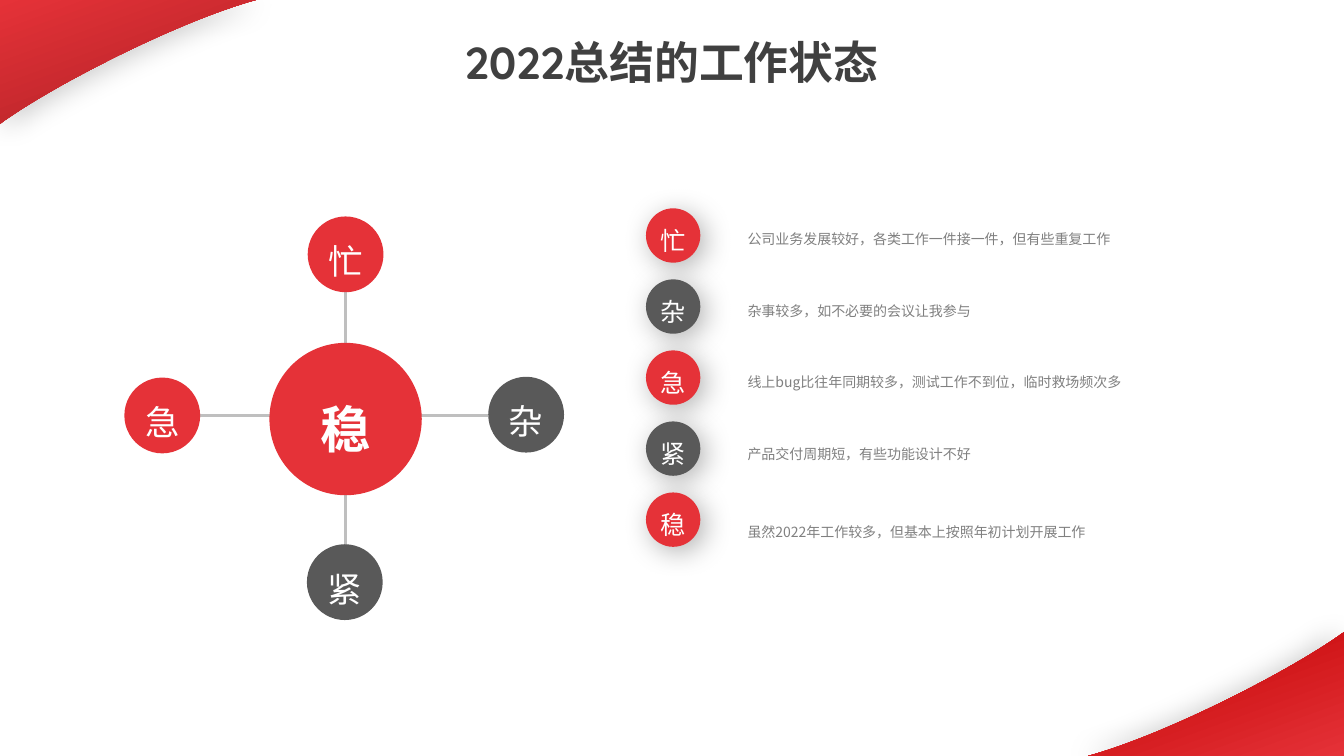
import dataclasses
import typing

import lxml.etree
import pptx
import pptx.dml.color
import pptx.enum.dml
import pptx.enum.shapes
import pptx.enum.text
import pptx.oxml.ns
import pptx.util

Cm = pptx.util.Cm
Pt = pptx.util.Pt
Align = pptx.enum.text.PP_ALIGN
Anchor = pptx.enum.text.MSO_ANCHOR
AutoSize = pptx.enum.text.MSO_AUTO_SIZE
qn = pptx.oxml.ns.qn

WIDTH, HEIGHT = 33.87, 19.05
RED, DARK_RED, DEEP_RED = "E53238", "AC2125", "C00000"
GRAY, LINE_GRAY, TEXT_GRAY, TITLE_GRAY = "595959", "BFBFBF", "808080", "404040"
WHITE, BLACK = "FFFFFF", "000000"
CJK_FONT, TITLE_FONT = "Noto Sans CJK SC", "Quicksand"
CORNER_CURVE = ((6.45, 0), (4.42, 0.56), (1.24, 2.21), (0, 3.12))
CURVE_STEPS = 32
ROW_DIAMETER, ROW_LEFT, ROW_TOP, ROW_STEP = 1.37, 16.28, 5.25, 1.79
NO_MARGINS = {f"margin_{side}": 0 for side in ("left", "top", "right", "bottom")}


@dataclasses.dataclass
class Corner:
    flipped: bool
    end_color: str
    gradient_angle: int
    shadow_direction: int


@dataclasses.dataclass
class Node:
    label: str
    center_x: float
    center_y: float
    color: str
    diameter: float = 1.91
    size: float = 24.6
    bold: bool = False


@dataclasses.dataclass
class Row:
    label: str
    color: str
    text: str
    text_top: float


@dataclasses.dataclass
class Spoke:
    begin_x: float
    begin_y: float
    end_x: float
    end_y: float


CORNERS = [
    Corner(False, DARK_RED, 290, 45),
    Corner(True, DEEP_RED, 110, 180),
]
SPOKES = [Spoke(8.71, 6.4, 8.71, 14.66), Spoke(12.29, 10.46, 5.05, 10.46)]
NODES = [
    Node("稳", 8.71, 10.56, RED, 3.84, 36, True),
    Node("忙", 8.71, 6.41, RED),
    Node("紧", 8.69, 14.67, GRAY),
    Node("急", 4.09, 10.47, RED),
    Node("杂", 13.26, 10.45, GRAY),
]
ROWS = [
    Row("忙", RED, "公司业务发展较好，各类工作一件接一件，但有些重复工作", 5.56),
    Row("杂", GRAY, "杂事较多，如不必要的会议让我参与", 7.37),
    Row("急", RED, "线上bug比往年同期较多，测试工作不到位，临时救场频次多", 9.17),
    Row("紧", GRAY, "产品交付周期短，有些功能设计不好", 10.97),
    Row("稳", RED, "虽然2022年工作较多，但基本上按照年初计划开展工作", 12.93),
]


def rgb(color: str) -> pptx.dml.color.RGBColor:
    return pptx.dml.color.RGBColor.from_string(color)


def apply(target: typing.Any, values: dict[str, typing.Any]) -> None:
    for name, value in values.items():
        setattr(target, name, value)


def add_shadow(shape: typing.Any, opacity: int, direction: int) -> None:
    shape.shadow.inherit = False
    effects = shape._element.spPr.find(qn("a:effectLst"))
    shadow = lxml.etree.SubElement(
        effects, qn("a:outerShdw"), blurRad=str(Pt(20)), dist=str(Pt(5)),
        dir=str(direction * 60000), algn="ctr", rotWithShape="0")
    color = lxml.etree.SubElement(shadow, qn("a:srgbClr"), val=BLACK)
    lxml.etree.SubElement(color, qn("a:alpha"), val=str(opacity * 1000))


def write_text(shape: typing.Any, text: str, color: str, frame_format: dict,
               paragraph_format: dict, font_format: dict) -> None:
    frame = shape.text_frame
    apply(frame, frame_format)
    paragraph = frame.paragraphs[0]
    apply(paragraph, paragraph_format)
    run = paragraph.add_run()
    run.text = text
    apply(run.font, {"name": CJK_FONT} | font_format)
    run.font.color.rgb = rgb(color)
    lxml.etree.SubElement(run._r.get_or_add_rPr(), qn("a:ea"), typeface=CJK_FONT)


def curve_point(position: float) -> tuple[float, float]:
    rest = 1 - position
    weights = (rest ** 3, 3 * rest ** 2 * position, 3 * rest * position ** 2, position ** 3)
    return tuple(sum(weight * point[axis] for weight, point in zip(weights, CORNER_CURVE))
                 for axis in (0, 1))


def add_corner(slide: typing.Any, corner: Corner) -> None:
    outline = [(0, 0)] + [curve_point(step / CURVE_STEPS) for step in range(CURVE_STEPS + 1)]
    if corner.flipped:
        outline = [(WIDTH - x, HEIGHT - y) for x, y in outline]
    points = [(Cm(x), Cm(y)) for x, y in outline]
    builder = slide.shapes.build_freeform(*points[0])
    builder.add_line_segments(points[1:], close=True)
    shape = builder.convert_to_shape()
    shape.fill.gradient()
    shape.fill.gradient_angle = corner.gradient_angle
    for stop, color in zip(shape.fill.gradient_stops, (RED, corner.end_color)):
        stop.color.rgb = rgb(color)
    shape.line.fill.background()
    add_shadow(shape, 20, corner.shadow_direction)


def add_spoke(slide: typing.Any, spoke: Spoke) -> None:
    ends = [Cm(value) for value in dataclasses.astuple(spoke)]
    connector = slide.shapes.add_connector(pptx.enum.shapes.MSO_CONNECTOR.STRAIGHT, *ends)
    connector.line.width = Pt(2)
    connector.line.color.rgb = rgb(LINE_GRAY)
    lxml.etree.SubElement(connector._element.spPr, qn("a:effectLst"))


def add_circle(slide: typing.Any, node: Node, frame_format: dict) -> typing.Any:
    radius = node.diameter / 2
    shape = slide.shapes.add_shape(
        pptx.enum.shapes.MSO_SHAPE.OVAL, Cm(node.center_x - radius),
        Cm(node.center_y - radius), Cm(node.diameter), Cm(node.diameter))
    shape.shadow.inherit = False
    shape.fill.solid()
    shape.fill.fore_color.rgb = rgb(node.color)
    shape.line.fill.background()
    write_text(shape, node.label, WHITE,
               {"vertical_anchor": Anchor.MIDDLE} | frame_format,
               {"alignment": Align.CENTER, "line_spacing": 1.3},
               {"size": Pt(node.size), "bold": node.bold})
    return shape


def add_row(slide: typing.Any, index: int, row: Row) -> None:
    radius = ROW_DIAMETER / 2
    badge = Node(row.label, ROW_LEFT + radius, ROW_TOP + index * ROW_STEP + radius,
                 row.color, ROW_DIAMETER, 18)
    add_shadow(add_circle(slide, badge, {"word_wrap": False}), 30, 45)
    text_box = slide.shapes.add_textbox(Cm(18.59), Cm(row.text_top), Cm(12.14), Cm(0.76))
    write_text(text_box, row.text, TEXT_GRAY,
               {"word_wrap": True, "auto_size": AutoSize.SHAPE_TO_FIT_TEXT},
               {"alignment": Align.JUSTIFY, "line_spacing": 1.3}, {"size": Pt(10)})


def add_title(slide: typing.Any) -> None:
    title = slide.shapes.add_textbox(Cm(11), Cm(0.74), Cm(11.86), Cm(1.63))
    write_text(title, "2022总结的工作状态", TITLE_GRAY,
               {"word_wrap": True, "auto_size": AutoSize.SHAPE_TO_FIT_TEXT},
               {"alignment": Align.CENTER},
               {"name": TITLE_FONT, "size": Pt(32), "bold": True})


def main() -> None:
    presentation = pptx.Presentation()
    apply(presentation, {"slide_width": Cm(WIDTH), "slide_height": Cm(HEIGHT)})
    slide = presentation.slides.add_slide(presentation.slide_layouts[6])
    for corner in CORNERS:
        add_corner(slide, corner)
    for spoke in SPOKES:
        add_spoke(slide, spoke)
    for node in NODES:
        add_circle(slide, node, {"word_wrap": True} | NO_MARGINS)
    for index, row in enumerate(ROWS):
        add_row(slide, index, row)
    add_title(slide)
    presentation.save("out.pptx")


if __name__ == "__main__":
    main()
